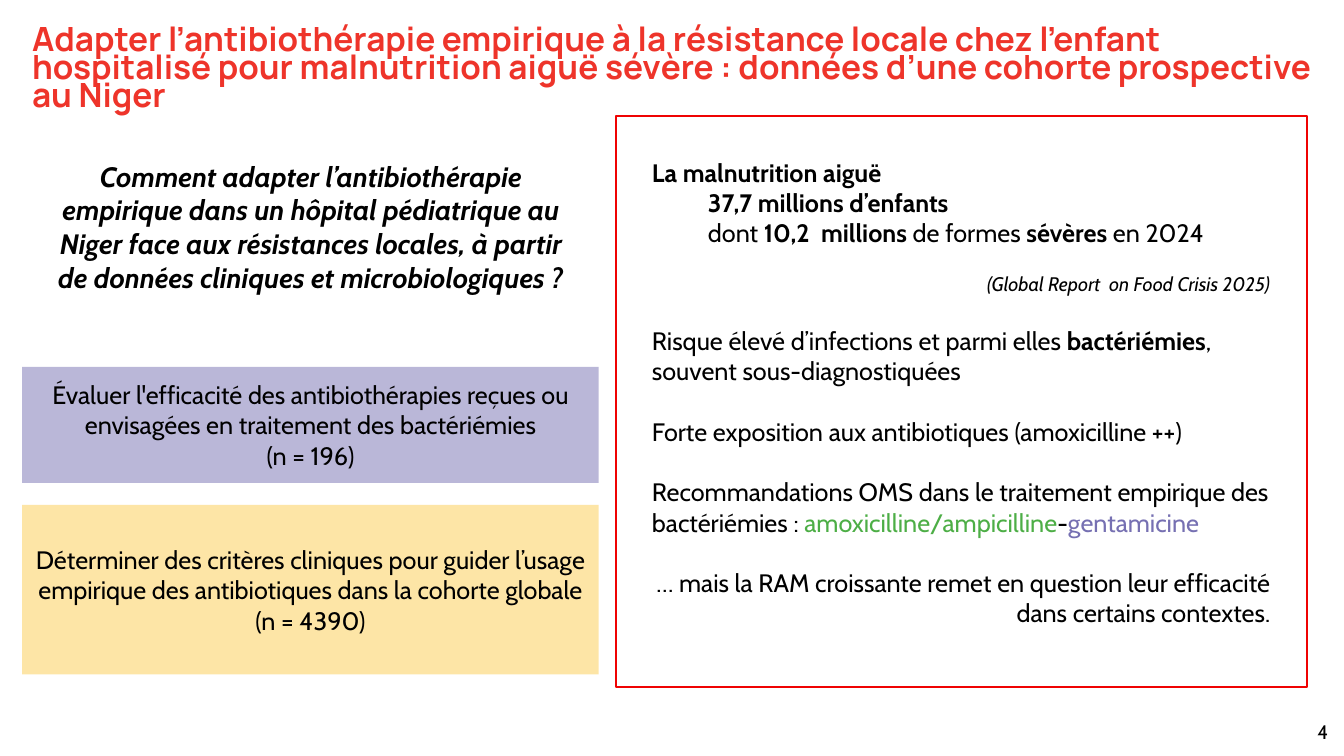
from pptx import Presentation
from pptx.dml.color import RGBColor
from pptx.enum.shapes import MSO_SHAPE as SHAPE
from pptx.enum.text import MSO_ANCHOR as ANCHOR, PP_ALIGN as ALIGN
from pptx.oxml.ns import qn
from pptx.util import Pt
from lxml.etree import SubElement

BLACK, RED, FRAME_RED = "000000", "EE342A", "EF0303"
GREEN, PURPLE, YELLOW = "4DAE46", "7670B2", "FDCC4E"
LEFT, LEFT_W = 15.84, 411.84


def rgb(value):
    """Turn a hex string into a colour."""
    return RGBColor.from_string(value)


def style(font, size=18, color=BLACK, bold=False, italic=False, name="Cabin"):
    """Set the look of a font."""
    font.name, font.size, font.bold, font.italic = name, Pt(size), bold, italic
    font.color.rgb = rgb(color)


def add_box(s, x, y, w, h, fill=None, line=None):
    """Add a rectangle with a half-transparent fill or an outline."""
    sp = s.shapes.add_shape(SHAPE.RECTANGLE, Pt(x), Pt(y), Pt(w), Pt(h))
    sp.shadow.inherit = False
    if fill:
        sp.fill.solid()
        sp.fill.fore_color.rgb = rgb(fill)
        color = sp.fill._xPr.find(qn("a:solidFill"))[0]
        SubElement(color, qn("a:alpha"), val="50000")
    else:
        sp.fill.background()
    if line:
        sp.line.color.rgb = rgb(line)
        sp.line.width = Pt(1.5)
    else:
        sp.line.fill.background()
    return sp


def add_goal(s, y, h, fill, goal, sample):
    """Add a tinted box with a study goal and its sample size."""
    sp = add_box(s, LEFT, y, LEFT_W, h, fill)
    tf = sp.text_frame
    tf.word_wrap = True
    tf.vertical_anchor = ANCHOR.MIDDLE
    tf.text = f"{goal}\n{sample}"
    for p in tf.paragraphs:
        p.alignment = ALIGN.CENTER
        style(p.runs[0].font)


def add_label(s, x, y, w, h, text, align=ALIGN.LEFT, spacing=None, wrap=True, **look):
    """Add a text box holding one paragraph."""
    tf = s.shapes.add_textbox(Pt(x), Pt(y), Pt(w), Pt(h)).text_frame
    tf.word_wrap = wrap
    tf.text = text
    p = tf.paragraphs[0]
    p.alignment = align
    if spacing:
        p.line_spacing = spacing
    style(p.runs[0].font, **look)


def add_context(s, x, y, w, h, paragraphs):
    """Add the context text from (gap before, indent, alignment, runs) rows."""
    tf = s.shapes.add_textbox(Pt(x), Pt(y), Pt(w), Pt(h)).text_frame
    tf.word_wrap = True
    for i, (gap, indent, align, runs) in enumerate(paragraphs):
        p = tf.add_paragraph() if i else tf.paragraphs[0]
        p.alignment = align
        if gap:
            p.space_before = Pt(gap)
        if indent:
            p._p.get_or_add_pPr().set("marL", str(Pt(indent)))
        for text, look in runs:
            r = p.add_run()
            r.text = text
            style(r.font, **look)


def main():
    """Build the slide."""
    prs = Presentation()
    prs.slide_width, prs.slide_height = Pt(960), Pt(540)
    s = prs.slides.add_slide(prs.slide_layouts[6])

    add_goal(s, 360.72, 120.96, YELLOW,
             "Déterminer des critères cliniques pour guider l’usage empirique "
             "des antibiotiques dans la cohorte globale", "(n = 4390)")
    add_goal(s, 262.08, 82.8, PURPLE,
             "Évaluer l'efficacité des antibiothérapies reçues ou envisagées "
             "en traitement des bactériémies", "(n = 196)")
    add_label(s, LEFT, 17.5, 930.24, 67,
              "Adapter l’antibiothérapie empirique à la résistance locale chez "
              "l’enfant hospitalisé pour malnutrition aiguë sévère : données "
              "d’une cohorte prospective au Niger",
              spacing=0.7, size=23.8, color=RED, bold=True, name="Manrope")
    add_label(s, 30.96, 110.16, 382.32, 128.16,
              "Comment adapter l’antibiothérapie empirique dans un hôpital "
              "pédiatrique au Niger face aux résistances locales, à partir de "
              "données cliniques et microbiologiques ?",
              ALIGN.CENTER, size=20, bold=True, italic=True)
    add_label(s, 933.84, 510.48, 22.32, 24.48, "4", wrap=False, size=14)

    add_box(s, 439.92, 82.8, 493.92, 408.24, line=FRAME_RED)
    plain, bold = {}, {"bold": True}
    line_gap = 21.6
    add_context(s, 458.64, 108.72, 455.76, 346.32, [
        (0, 0, ALIGN.LEFT, [("La malnutrition aiguë", bold)]),
        (0, 40, ALIGN.LEFT, [("37,7 millions d’enfants", bold)]),
        (0, 40, ALIGN.LEFT, [("dont ", plain), ("10,2  millions ", bold),
                             ("de formes ", plain), ("sévères", bold),
                             (" en 2024", plain)]),
        (17, 0, ALIGN.RIGHT, [("(Global Report  on Food Crisis 2025)",
                               {"size": 14, "italic": True})]),
        (line_gap, 0, ALIGN.LEFT, [("Risque élevé d’infections et parmi elles ", plain),
                                   ("bactériémies", bold),
                                   (", souvent sous-diagnostiquées", plain)]),
        (line_gap, 0, ALIGN.LEFT, [("Forte exposition aux antibiotiques "
                                    "(amoxicilline ++)", plain)]),
        (line_gap, 0, ALIGN.LEFT, [("Recommandations OMS dans le traitement empirique "
                                    "des bactériémies : ", plain),
                                   ("amoxicilline/ampicilline", {"color": GREEN}),
                                   ("-", plain),
                                   ("gentamicine", {"color": PURPLE})]),
        (line_gap, 0, ALIGN.RIGHT, [("… mais la RAM croissante remet en question leur "
                                     "efficacité dans certains contextes.", plain)]),
    ])
    prs.save("out.pptx")


if __name__ == "__main__":
    main()
